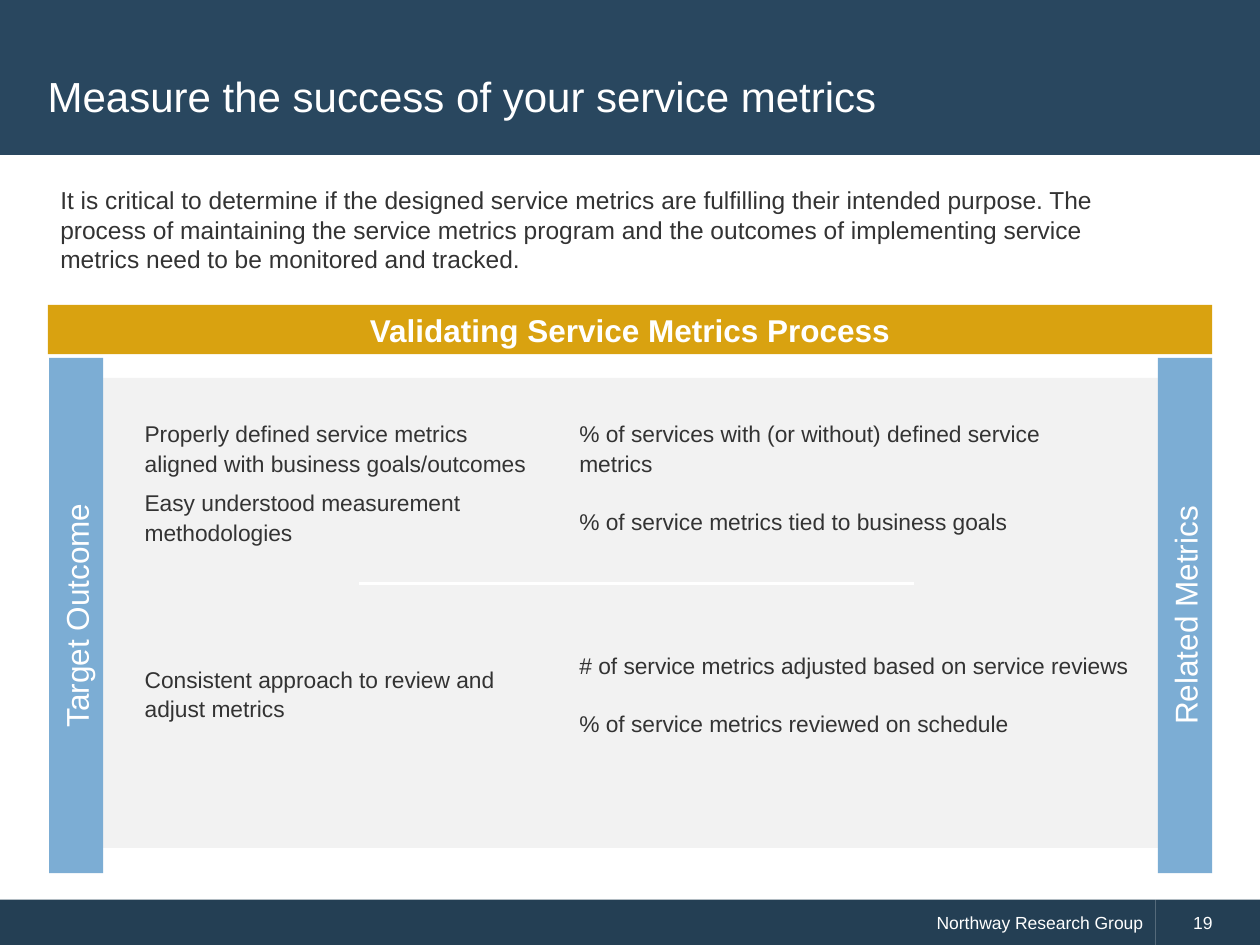
from lxml.etree import SubElement
from pptx import Presentation
from pptx.dml.color import RGBColor
from pptx.enum.shapes import MSO_CONNECTOR, MSO_SHAPE
from pptx.enum.text import MSO_ANCHOR, PP_ALIGN
from pptx.oxml.ns import qn
from pptx.util import Inches, Pt

NAVY = RGBColor(0x29, 0x47, 0x5F)
DARK_NAVY = RGBColor(0x24, 0x3F, 0x54)
LIGHT_GRAY = RGBColor(0xF2, 0xF2, 0xF2)
BLUE = RGBColor(0x7C, 0xAD, 0xD4)
GOLD = RGBColor(0xD9, 0xA2, 0x10)
WHITE = RGBColor(0xFF, 0xFF, 0xFF)
TEXT_GRAY = RGBColor(0x33, 0x33, 0x33)

TITLE = "Measure the success of your service metrics"
INTRO = (
    "It is critical to determine if the designed service metrics are fulfilling their "
    "intended purpose. The process of maintaining the service metrics program and the "
    "outcomes of implementing service metrics need to be monitored and tracked."
)
BANNER = "Validating Service Metrics Process"
FOOTER = "Northway Research Group"
PAGE_NUMBER = "19"
SIDE_LABELS = [("Target Outcome", 0.39), ("Related Metrics", 9.19)]

OUTCOMES_LEFT, METRICS_LEFT = 1.05, 4.5
BODY_TEXTS = [
    (OUTCOMES_LEFT, 3.27, 3.3, 1.12, 6, [
        "Properly defined service metrics aligned with business goals/outcomes",
        "Easy understood measurement methodologies",
    ]),
    (METRICS_LEFT, 3.27, 4.4, 1.04, 16.5, [
        "% of services with (or without) defined service metrics",
        "% of service metrics tied to business goals",
    ]),
    (OUTCOMES_LEFT, 5.22, 3.18, 0.57, 0, [
        "Consistent approach to review and adjust metrics",
    ]),
    (METRICS_LEFT, 5.11, 4.74, 0.79, 16.5, [
        "# of service metrics adjusted based on service reviews",
        "% of service metrics reviewed on schedule",
    ]),
]


def write(shape, texts, size, color, align=PP_ALIGN.LEFT, anchor=MSO_ANCHOR.MIDDLE,
          bold=False, line_spacing=1.0, gap=0):
    frame = shape.text_frame
    frame.word_wrap = True
    frame.vertical_anchor = anchor
    for index, text in enumerate(texts):
        paragraph = frame.add_paragraph() if index else frame.paragraphs[0]
        paragraph.text = text
        paragraph.alignment = align
        paragraph.line_spacing = line_spacing
        paragraph.space_before = Pt(gap if index else 0)
        font = paragraph.font
        font.name, font.size, font.bold = "Arial", Pt(size), bold
        font.color.rgb = color
    return frame


def add_bar(slide, left, top, width, height, color):
    bar = slide.shapes.add_shape(
        MSO_SHAPE.RECTANGLE, Inches(left), Inches(top), Inches(width), Inches(height))
    bar.shadow.inherit = False
    bar.fill.solid()
    bar.fill.fore_color.rgb = color
    bar.line.fill.background()
    return bar


def add_text(slide, left, top, width, height, texts, size, color, **style):
    box = slide.shapes.add_textbox(
        Inches(left), Inches(top), Inches(width), Inches(height))
    write(box, texts, size, color, **style)


def add_divider(slide, left, right, y):
    line = slide.shapes.add_connector(
        MSO_CONNECTOR.STRAIGHT, Inches(left), Inches(y), Inches(right), Inches(y))
    line.line.color.rgb = WHITE
    line.line.width = Pt(2)
    SubElement(line._element.spPr, qn("a:effectLst"))


def main():
    presentation = Presentation()
    presentation.slide_width, presentation.slide_height = Inches(10), Inches(7.5)
    slide = presentation.slides.add_slide(presentation.slide_layouts[6])

    footer = add_bar(slide, 0, 7.14, 9.17, 0.37, DARK_NAVY)
    write(footer, [FOOTER], 10, WHITE, align=PP_ALIGN.RIGHT)
    page = add_bar(slide, 9.17, 7.14, 0.83, 0.37, DARK_NAVY)
    write(page, [PAGE_NUMBER], 10, WHITE).margin_left = Inches(0.3)

    add_bar(slide, 0, 0, 10, 1.23, NAVY)
    add_text(slide, 0.28, 0.28, 9.43, 0.96, [TITLE], 24, WHITE)
    add_text(slide, 0.38, 1.42, 8.85, 0.81, [INTRO], 14, TEXT_GRAY, anchor=MSO_ANCHOR.TOP)

    add_bar(slide, 0.81, 3, 8.41, 3.73, LIGHT_GRAY)
    for label, left in SIDE_LABELS:
        side = add_bar(slide, left, 2.84, 0.43, 4.09, BLUE)
        frame = write(side, [label], 18, WHITE, align=PP_ALIGN.CENTER)
        frame._txBody.bodyPr.set("vert", "vert270")

    banner = add_bar(slide, 0.38, 2.42, 9.24, 0.39, GOLD)
    write(banner, [BANNER], 18, WHITE, align=PP_ALIGN.CENTER, bold=True)

    for left, top, width, height, gap, texts in BODY_TEXTS:
        add_text(slide, left, top, width, height, texts, 13, TEXT_GRAY,
                 anchor=MSO_ANCHOR.TOP, line_spacing=1.07, gap=gap)
    add_divider(slide, 2.85, 7.25, 4.63)

    presentation.save("out.pptx")


if __name__ == "__main__":
    main()
